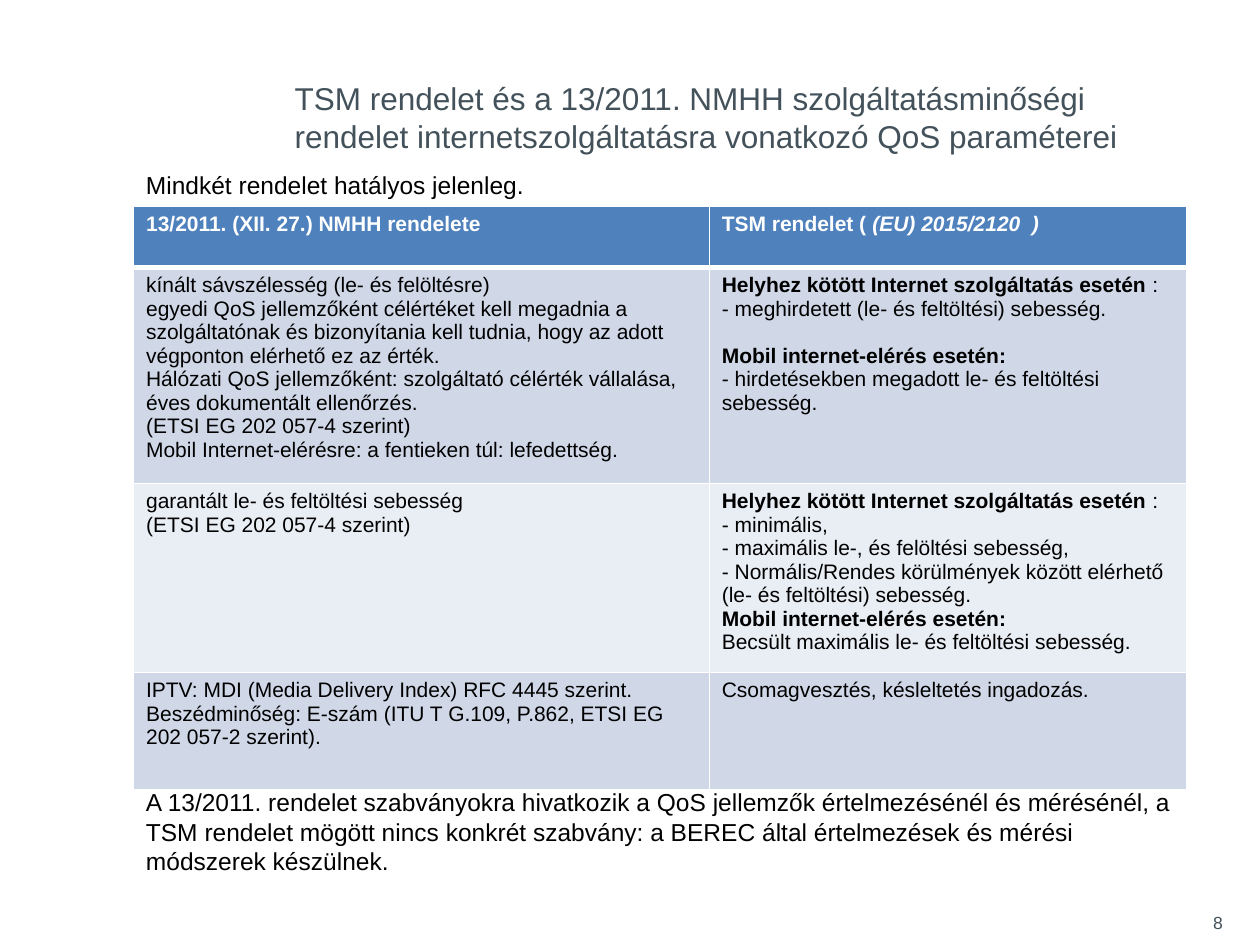
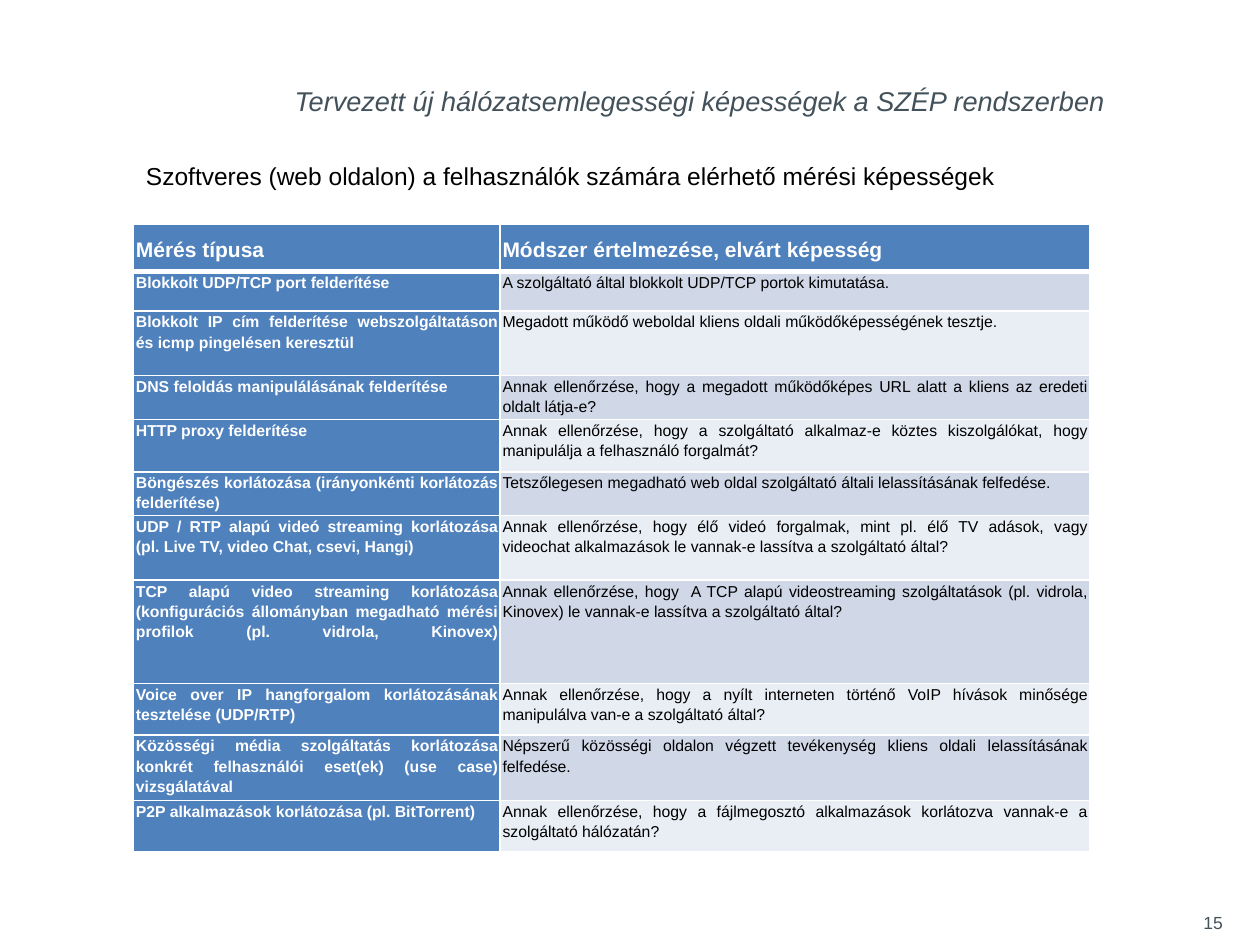
import pptx
import pptx.util
import pptx.dml.color
import pptx.enum.text
import pptx.oxml
import pptx.oxml.ns

Pt = pptx.util.Pt
RGB = pptx.dml.color.RGBColor
ALIGN = pptx.enum.text.PP_ALIGN
ANCHOR = pptx.enum.text.MSO_ANCHOR

# Content: a paragraph is a string or a list of (text, style); b bold, i italic
FIXED_LINE = [("Helyhez kötött Internet szolgáltatás esetén ", "b"), (":", "")]
MOBILE_LINE = [("Mobil internet-elérés esetén:", "b")]

QOS_TITLE = ("TSM rendelet és a 13/2011. NMHH szolgáltatásminőségi rendelet "
             "internetszolgáltatásra vonatkozó QoS paraméterei")
QOS_INTRO = "Mindkét rendelet hatályos jelenleg."
QOS_CLOSING = ("A 13/2011. rendelet szabványokra hivatkozik a QoS jellemzők értelmezésénél "
               "és mérésénél, a TSM rendelet mögött nincs konkrét szabvány: a BEREC által "
               "értelmezések és mérési módszerek készülnek.")
QOS_ROWS = [
    (35, ["13/2011. (XII. 27.) NMHH rendelete"],
     [[("TSM rendelet ( ", ""), ("(EU) 2015/2120  )", "i")]]),
    (123.5,
     ["kínált sávszélesség (le- és felöltésre)",
      "egyedi QoS jellemzőként célértéket kell megadnia a szolgáltatónak és bizonyítania "
      "kell tudnia, hogy az adott végponton elérhető ez az érték.",
      "Hálózati QoS jellemzőként: szolgáltató célérték vállalása, éves dokumentált ellenőrzés.",
      "(ETSI EG 202 057-4 szerint)",
      "Mobil Internet-elérésre: a fentieken túl: lefedettség."],
     [FIXED_LINE, "- meghirdetett (le- és feltöltési) sebesség.",
      MOBILE_LINE, "- hirdetésekben megadott le- és feltöltési sebesség."]),
    (107.5,
     ["garantált le- és feltöltési sebesség", "(ETSI EG 202 057-4 szerint)"],
     [FIXED_LINE, "- minimális,", "- maximális le-, és felöltési sebesség,",
      "- Normális/Rendes körülmények között elérhető (le- és feltöltési) sebesség.",
      MOBILE_LINE, "Becsült maximális le- és feltöltési sebesség."]),
    (67,
     ["IPTV: MDI (Media Delivery Index) RFC 4445 szerint.",
      "Beszédminőség: E-szám (ITU T G.109, P.862, ETSI EG 202 057-2 szerint)."],
     ["Csomagvesztés, késleltetés ingadozás."]),
]

TESTS_TITLE = "Tervezett új hálózatsemlegességi képességek a SZÉP rendszerben"
TESTS_INTRO = "Szoftveres (web oldalon) a felhasználók számára elérhető mérési képességek"
TESTS_ROWS = [
    (27, ["Mérés típusa"], ["Módszer értelmezése, elvárt képesség "]),
    (22.5, ["Blokkolt UDP/TCP port felderítése"],
     ["A szolgáltató által blokkolt UDP/TCP portok kimutatása."]),
    (37, ["Blokkolt IP cím felderítése webszolgáltatáson és icmp pingelésen keresztül"],
     ["Megadott működő weboldal kliens oldali működőképességének tesztje."]),
    (23, ["DNS feloldás manipulálásának felderítése"],
     ["Annak ellenőrzése, hogy a megadott működőképes URL alatt a kliens az eredeti "
      "oldalt látja-e?"]),
    (30, ["HTTP proxy felderítése"],
     ["Annak ellenőrzése, hogy a szolgáltató alkalmaz-e köztes kiszolgálókat, hogy "
      "manipulálja a felhasználó forgalmát?"]),
    (23, ["Böngészés korlátozása (irányonkénti korlátozás felderítése)"],
     ["Tetszőlegesen megadható web oldal szolgáltató általi lelassításának felfedése."]),
    (37, ["UDP / RTP alapú videó streaming korlátozása (pl. Live TV, video Chat, csevi, Hangi)"],
     ["Annak ellenőrzése, hogy élő videó forgalmak, mint pl. élő TV adások, vagy videochat "
      "alkalmazások le vannak-e lassítva a szolgáltató által?"]),
    (59, ["TCP alapú video streaming korlátozása (konfigurációs állományban megadható mérési "
          "profilok (pl. vidrola, Kinovex)\n"],
     ["Annak ellenőrzése, hogy  A TCP alapú videostreaming szolgáltatások (pl. vidrola, "
      "Kinovex) le vannak-e lassítva a szolgáltató által?"]),
    (29.5, ["Voice over IP hangforgalom korlátozásának tesztelése (UDP/RTP) "],
     ["Annak ellenőrzése, hogy a nyílt interneten történő VoIP hívások minősége "
      "manipulálva van-e a szolgáltató által? "]),
    (37, ["Közösségi média szolgáltatás korlátozása konkrét felhasználói eset(ek) "
          "(use case) vizsgálatával "],
     ["Népszerű közösségi oldalon végzett tevékenység kliens oldali lelassításának "
      "felfedése."]),
    (29.5, ["P2P alkalmazások korlátozása (pl. BitTorrent)"],
     ["Annak ellenőrzése, hogy a fájlmegosztó alkalmazások korlátozva vannak-e a "
      "szolgáltató hálózatán?"]),
]

# Shared look
FONT = "Arial"
SLATE = RGB(0x43, 0x51, 0x5A)
BLACK = RGB(0, 0, 0)
WHITE = RGB(0xFF, 0xFF, 0xFF)
HEADER_BLUE = RGB(0x4F, 0x81, 0xBD)
BANDS = (RGB(0xE9, 0xED, 0xF4), RGB(0xD0, 0xD8, 0xE8))
LEFT = 76.3


def write(paragraph, content, size, color, bold=False, italic=False):
    for text, style in [(content, "")] if isinstance(content, str) else content:
        run = paragraph.add_run()
        run.text = text.rstrip("\n")
        run.font.name = FONT
        run.font.size = Pt(size)
        run.font.color.rgb = color
        run.font.bold = bold or "b" in style
        run.font.italic = italic or "i" in style
        if text.endswith("\n"):
            paragraph.add_line_break()


def add_text(slide, box, text, size, color=BLACK, italic=False, align=ALIGN.LEFT,
             leading=None, padding=3.6):
    frame = slide.shapes.add_textbox(*map(Pt, box)).text_frame
    frame.word_wrap = True
    frame.margin_top = frame.margin_bottom = Pt(padding)
    paragraph = frame.paragraphs[0]
    paragraph.alignment = align
    if leading:
        paragraph.line_spacing = Pt(leading)
    write(paragraph, text, size, color, italic=italic)


def add_page(deck, title, title_size, number, italic=False):
    slide = deck.slides.add_slide(deck.slide_layouts[6])
    add_text(slide, (672, 517.5, 33.8, 28.8), number, 10, SLATE, align=ALIGN.RIGHT)
    add_text(slide, (161.3, 44.6, 511.2, 22.3), title, title_size, SLATE, italic,
             leading=22, padding=0)
    return slide


def draw_borders(cell, top, bottom):
    properties = cell._tc.get_or_add_tcPr()
    for place, (side, width) in enumerate(zip("LRTB", (1, 1, top, bottom))):
        properties.insert(place, pptx.oxml.parse_xml(
            f'<a:ln{side} {pptx.oxml.ns.nsdecls("a")} w="{Pt(width)}">'
            f'<a:solidFill><a:srgbClr val="{WHITE}"/></a:solidFill></a:ln{side}>'))


def add_grid(slide, top, widths, rows):
    heights = [row[0] for row in rows]
    table = slide.shapes.add_table(len(rows), len(widths), Pt(LEFT), Pt(top),
                                   Pt(sum(widths)), Pt(sum(heights))).table
    table.first_row = table.horz_banding = False
    for column, width in zip(table.columns, widths):
        column.width = Pt(width)
    for r, (height, *cells) in enumerate(rows):
        table.rows[r].height = Pt(height)
        for c, paragraphs in enumerate(cells):
            yield r, c, table.cell(r, c), paragraphs


def style_cell(cell, r, is_header):
    cell.fill.solid()
    cell.fill.fore_color.rgb = HEADER_BLUE if is_header else BANDS[r % 2]
    draw_borders(cell, 3 if r == 1 else 1, 3 if r == 0 else 1)
    return WHITE if is_header else BLACK


def add_paragraphs(frame, paragraphs):
    for n, content in enumerate(paragraphs):
        yield (frame.add_paragraph() if n else frame.paragraphs[0]), content


def build_qos_page(deck):
    slide = add_page(deck, QOS_TITLE, 18, "8")
    add_text(slide, (LEFT, 93.6, 562.3, 24.5), QOS_INTRO, 14)
    for r, c, cell, paragraphs in add_grid(slide, 117.8, (329, 273), QOS_ROWS):
        color = style_cell(cell, r, r == 0)
        for paragraph, content in add_paragraphs(cell.text_frame, paragraphs):
            write(paragraph, content, 12, color, bold=r == 0)
            # One line of air before the mobile section of the first band
            if r == 1 and content is MOBILE_LINE:
                paragraph.space_before = Pt(13.5)
    add_text(slide, (LEFT, 446.4, 601.2, 58.3), QOS_CLOSING, 14)


def build_tests_page(deck):
    slide = add_page(deck, TESTS_TITLE, 15.5, "15", italic=True)
    for r, c, cell, paragraphs in add_grid(slide, 128.2, (209.5, 337), TESTS_ROWS):
        is_header = r == 0 or c == 0
        color = style_cell(cell, r, is_header)
        cell.margin_left = cell.margin_right = Pt(1.4)
        cell.margin_top = cell.margin_bottom = Pt(0)
        cell.vertical_anchor = ANCHOR.MIDDLE if r == 0 else ANCHOR.TOP
        for paragraph, content in add_paragraphs(cell.text_frame, paragraphs):
            paragraph.alignment = ALIGN.JUSTIFY
            paragraph.line_spacing = 1.15
            write(paragraph, content, 9 if r else 12, color, bold=is_header)
    add_text(slide, (LEFT, 88.6, 550, 24.5), TESTS_INTRO, 14)


def main():
    deck = pptx.Presentation()
    deck.slide_width, deck.slide_height = Pt(720), Pt(540)
    build_qos_page(deck)
    build_tests_page(deck)
    deck.save("out.pptx")


if __name__ == "__main__":
    main()
